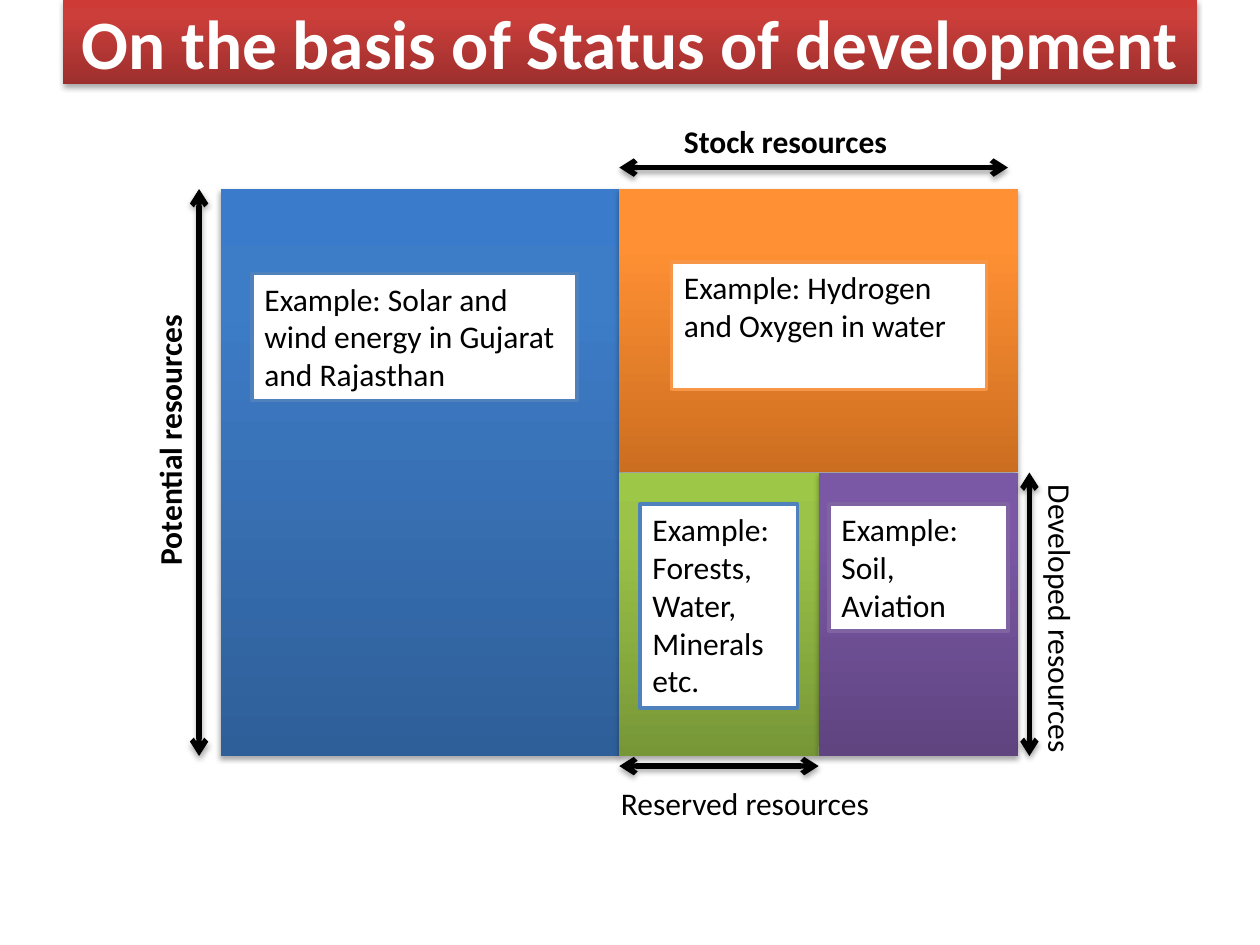
from copy import deepcopy
from dataclasses import dataclass

from lxml import etree
from pptx import Presentation
from pptx.dml.color import RGBColor
from pptx.enum.shapes import MSO_CONNECTOR, MSO_SHAPE
from pptx.enum.text import MSO_ANCHOR, PP_ALIGN
from pptx.oxml import parse_xml
from pptx.oxml.ns import nsdecls, qn
from pptx.util import Inches, Pt

RECTANGLE = MSO_SHAPE.RECTANGLE
STRAIGHT = MSO_CONNECTOR.STRAIGHT
TOP, MIDDLE = MSO_ANCHOR.TOP, MSO_ANCHOR.MIDDLE
LEFT, CENTER = PP_ALIGN.LEFT, PP_ALIGN.CENTER


@dataclass(frozen=True)
class Theme:
    font: str = "Calibri"
    title_size: float = 39.6
    body_size: float = 18
    ink: str = "000000"
    paper: str = "FFFFFF"
    red: tuple = ("9C2F2D", "CB3E3A", "CE3B37")
    blue: tuple = ("2F5F99", "3D7CC7", "3A7CCB")
    orange: tuple = ("CC6E20", "FF9034", "FF9136")
    green: tuple = ("779737", "9BC348", "9DC746")
    purple: tuple = ("5F4480", "7B58A6", "7C57A8")
    blue_edge: str = "4F81BD"
    orange_edge: str = "F79646"
    purple_edge: str = "8064A2"
    stops: tuple = (0, 0.8, 1)
    arrow_width: float = 3
    edge_width: float = 2


class SlideBuilder:
    def __init__(self, slide, theme):
        self.shapes = slide.shapes
        self.theme = theme

    def cast_shadow(self, shape):
        shape._element.spPr.append(parse_xml(
            f'<a:effectLst {nsdecls("a")}>'
            '<a:outerShdw blurRad="40000" dist="23000" dir="5400000" rotWithShape="0">'
            f'<a:srgbClr val="{self.theme.ink}"><a:alpha val="35000"/></a:srgbClr>'
            '</a:outerShdw></a:effectLst>'))

    def set_text(self, shape, text, **changes):
        frame = shape.text_frame
        frame.word_wrap = True
        frame.vertical_anchor = changes.pop("anchor", TOP)
        paragraph = frame.paragraphs[0]
        paragraph.alignment = changes.pop("align", LEFT)
        run = paragraph.add_run()
        run.text = text
        run.font.color.rgb = RGBColor.from_string(changes.pop("color", self.theme.ink))
        style = {"name": self.theme.font, "size": Pt(self.theme.body_size), "bold": False}
        for key, value in {**style, **changes}.items():
            setattr(run.font, key, value)

    def panel(self, box, colors):
        panel = self.shapes.add_shape(RECTANGLE, *map(Inches, box))
        panel.fill.gradient()
        panel.fill.gradient_angle = 90
        stop_list = panel._element.spPr.find(".//" + qn("a:gsLst"))
        stop_list.append(deepcopy(stop_list[-1]))
        for stop, position, color in zip(panel.fill.gradient_stops, self.theme.stops, colors):
            stop.position = position
            stop.color.rgb = RGBColor.from_string(color)
        panel.line.fill.background()
        self.cast_shadow(panel)
        return panel

    def title(self, box, text):
        self.set_text(self.panel(box, self.theme.red), text, size=Pt(self.theme.title_size),
                      bold=True, color=self.theme.paper, align=CENTER, anchor=MIDDLE)

    def extent_arrow(self, start, end):
        arrow = self.shapes.add_connector(STRAIGHT, *map(Inches, (*start, *end)))
        arrow.line.color.rgb = RGBColor.from_string(self.theme.ink)
        arrow.line.width = Pt(self.theme.arrow_width)
        outline = arrow._element.spPr.find(qn("a:ln"))
        for end_tag in ("a:headEnd", "a:tailEnd"):
            etree.SubElement(outline, qn(end_tag), type="arrow")
        self.cast_shadow(arrow)

    def label(self, box, text, bold=False, rotation=0):
        label = self.shapes.add_textbox(*map(Inches, box))
        label.rotation = rotation
        self.set_text(label, text, bold=bold)

    def example(self, box, text, edge):
        card = self.shapes.add_shape(RECTANGLE, *map(Inches, box))
        card.shadow.inherit = False
        card.fill.solid()
        card.fill.fore_color.rgb = RGBColor.from_string(self.theme.paper)
        card.line.color.rgb = RGBColor.from_string(edge)
        card.line.width = Pt(self.theme.edge_width)
        self.set_text(card, "Example: " + text)


def main():
    deck = Presentation()
    deck.slide_width, deck.slide_height = Inches(10), Inches(7.5)
    theme = Theme()
    builder = SlideBuilder(deck.slides.add_slide(deck.slide_layouts[6]), theme)

    builder.title((0.5, 0, 9, 0.67), "On the basis of Status of development")

    left, top, width, height = 1.75, 1.5, 6.33, 4.5
    half_width, half_height, quarter = width / 2, height / 2, width / 4
    center, middle = left + half_width, top + half_height
    split, bottom = center + quarter, top + height

    for box, colors in (
        ((left, top, half_width, height), theme.blue),
        ((center, top, half_width, half_height), theme.orange),
        ((center, middle, quarter, half_height), theme.green),
        ((split, middle, quarter, half_height), theme.purple),
    ):
        builder.panel(box, colors)

    for start, end in (
        ((1.58, top), (1.58, bottom)),
        ((center, 1.33), (8, 1.33)),
        ((8.17, middle), (8.17, bottom)),
        ((center, 6.08), (split, 6.08)),
    ):
        builder.extent_arrow(start, end)

    for box, text, bold, rotation in (
        ((0.23, 3.27, 2.23, 0.4), "Potential resources", True, 270),
        ((5.33, 0.92, 2.33, 0.4), "Stock resources", True, 0),
        ((6.96, 5.01, 2.92, 0.4), "Developed resources", False, 90),
        ((4.83, 6.17, 2.5, 0.4), "Reserved resources", False, 0),
    ):
        builder.label(box, text, bold, rotation)

    for box, text, edge in (
        ((2, 2.17, 2.58, 1.01), "Solar and wind energy in Gujarat and Rajasthan", theme.blue_edge),
        ((5.33, 2.08, 2.5, 1.01), "Hydrogen and Oxygen in water", theme.orange_edge),
        ((6.58, 4, 1.42, 1.01), "Soil, Aviation", theme.purple_edge),
        ((5.08, 4, 1.25, 1.62), "Forests, Water, Minerals etc.", theme.blue_edge),
    ):
        builder.example(box, text, edge)

    deck.save("out.pptx")


if __name__ == "__main__":
    main()
